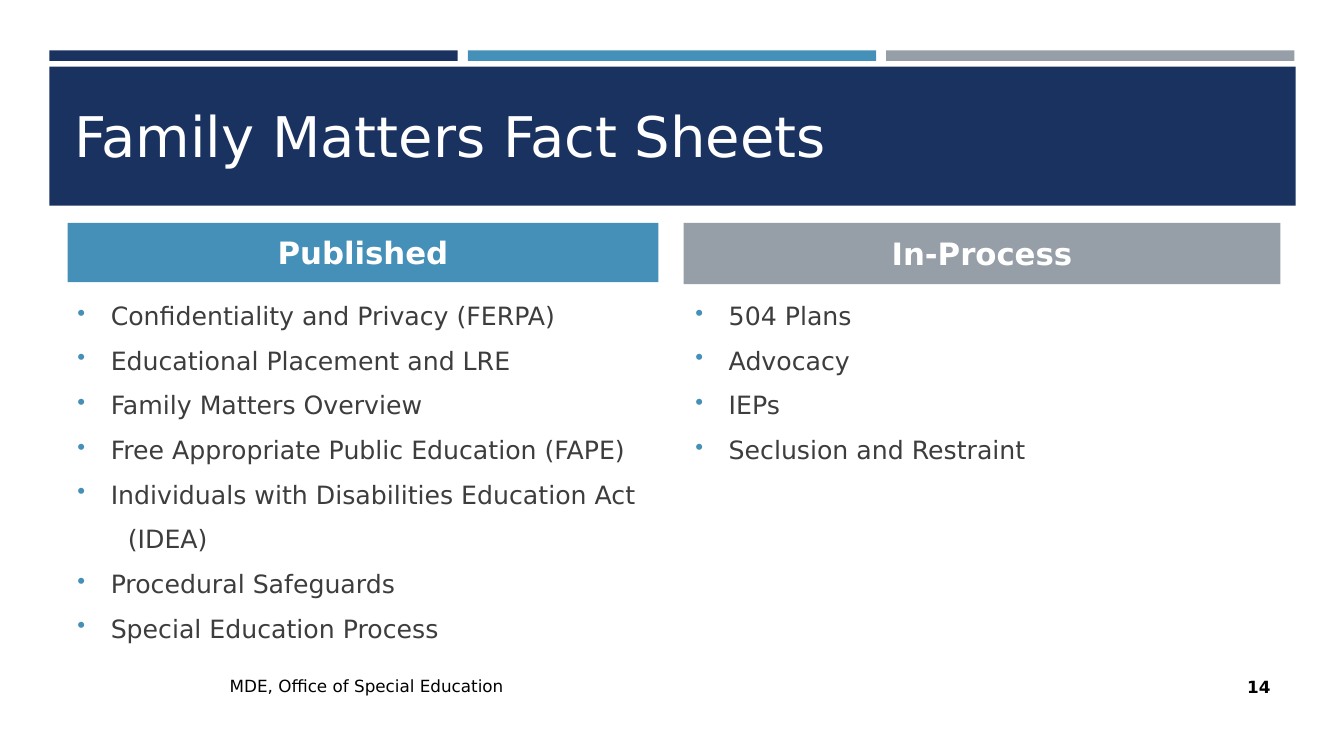
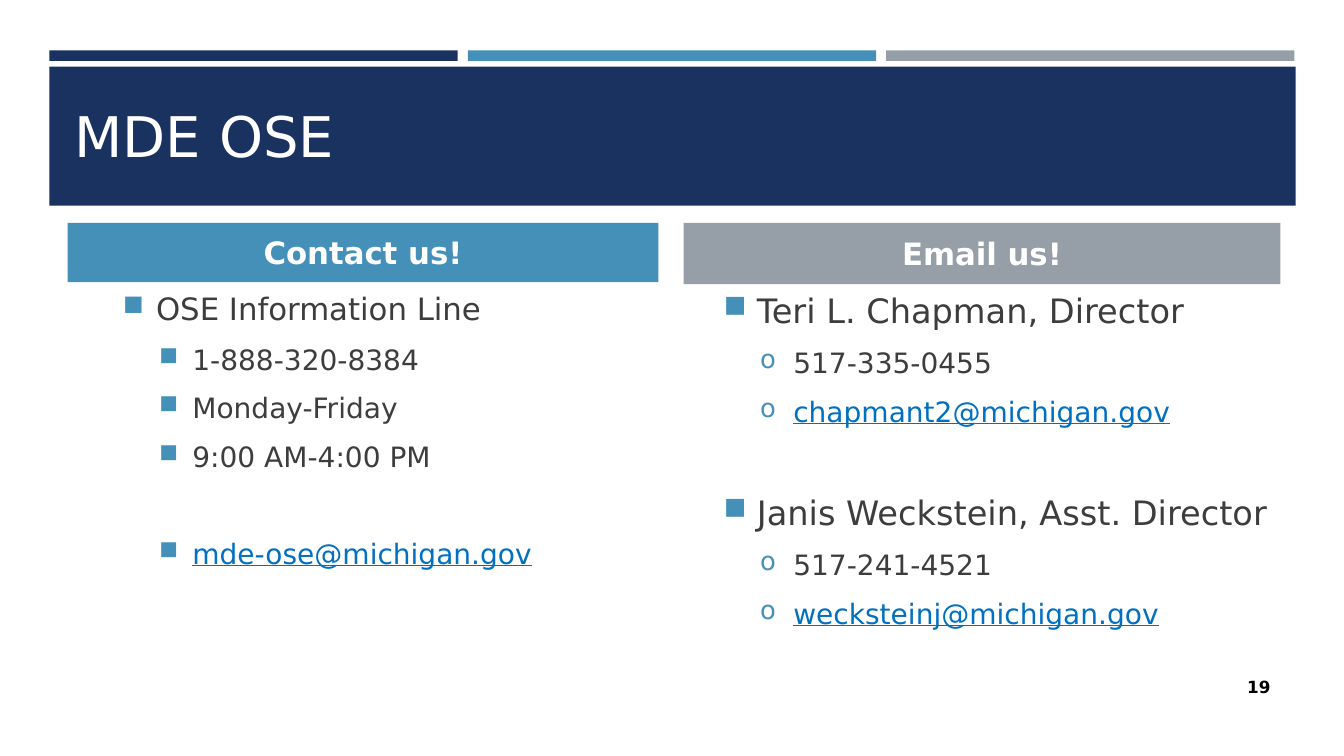
from dataclasses import dataclass
from lxml.etree import SubElement as Sub
from pptx import Presentation
from pptx.dml.color import RGBColor as Rgb
from pptx.enum.shapes import MSO_SHAPE as Shape
from pptx.enum.text import MSO_ANCHOR as Anchor, MSO_AUTO_SIZE as Fit, PP_ALIGN as Align
from pptx.oxml.ns import qn
from pptx.util import Inches, Pt


@dataclass(frozen=True)
class Theme:
    """Colours, type sizes and paragraph spacing."""
    navy: str = "1A3260"
    blue: str = "4590B8"
    gray: str = "969FA7"
    ink: str = "3D3D3D"
    link: str = "0070C0"
    white: str = "FFFFFF"
    black: str = "000000"
    font: str = "DejaVu Sans"
    title: int = 40
    lead: int = 24
    head: int = 22
    sub: int = 20
    item: int = 18
    foot: int = 12
    lift: float = 0.24  # space before, as a share of the type size
    drop: int = 6       # space after
    skip: int = 34      # extra space before a new group


T = Theme()

# Kinds of list line: bullet, left indent, hanging indent, font values
KINDS = {
    "dot": ("•", 0.33, -0.33, dict(size=T.item)),
    "cont": (None, 0.5, 0, dict(size=T.item)),
    "info": ("■", 0.33, -0.33, dict(size=T.head)),
    "name": ("■", 0.33, -0.33, dict(size=T.lead)),
    "box": ("■", 0.69, -0.33, dict(size=T.sub)),
    "ring": ("o", 0.69, -0.33, dict(size=T.sub)),
    "boxmail": ("■", 0.69, -0.33, dict(size=T.sub, color=T.link, underline=True)),
    "ringmail": ("o", 0.69, -0.33, dict(size=T.sub, color=T.link, underline=True)),
}


class Deck:
    """Holds the style and the current slide; places are percent of the slide."""

    def __init__(self):
        self.prs = Presentation()
        self.prs.slide_width, self.prs.slide_height = Inches(13.33), Inches(7.5)
        self.slide = None

    def place(self, x, y, w, h):
        wide, high = self.prs.slide_width, self.prs.slide_height
        return [int(n * side / 100) for n, side in zip((x, y, w, h), (wide, high) * 2)]

    def style(self, para, size, color=T.ink, **more):
        form = dict(name=T.font, size=Pt(size), **more)
        for key, val in form.items():
            setattr(para.font, key, val)
        para.font.color.rgb = Rgb.from_string(color)

    def put(self, shape, text, align=Align.LEFT, **form):
        frame = shape.text_frame
        setup = dict(word_wrap=True, auto_size=Fit.NONE, vertical_anchor=Anchor.MIDDLE)
        for key, val in setup.items():
            setattr(frame, key, val)
        frame.text = text
        para = frame.paragraphs[0]
        para.alignment = align
        self.style(para, **form)

    def rect(self, spot, fill):
        shape = self.slide.shapes.add_shape(Shape.RECTANGLE, *self.place(*spot))
        shape.shadow.inherit = False
        shape.fill.solid()
        shape.fill.fore_color.rgb = Rgb.from_string(fill)
        shape.line.fill.background()
        return shape

    def label(self, spot, text, **form):
        self.put(self.slide.shapes.add_textbox(*self.place(*spot)), text, **form)

    def page(self, title, num):
        self.slide = self.prs.slides.add_slide(self.prs.slide_layouts[5])
        # Three stripes above the title band
        for i, fill in enumerate((T.navy, T.blue, T.gray)):
            self.rect((3.68 + i * 31.13, 6.67, 30.38, 1.4), fill)
        self.rect((3.68, 8.8, 92.72, 18.4), T.navy)
        # Title, brought in front of its band
        head = self.slide.shapes.title
        head.left, head.top, head.width, head.height = self.place(4.8, 10.67, 90.47, 14.4)
        self.put(head, title, size=T.title, color=T.white)
        head.element.getparent().append(head.element)
        # Page number
        self.label((86.65, 88.13, 8.63, 5.33), num, align=Align.RIGHT,
                   size=T.foot, color=T.black, bold=True)

    def heads(self, left, right):
        for text, fill, x, w, h in ((left, T.blue, 5.03, 43.96, 7.87),
                                    (right, T.gray, 50.86, 44.41, 8.13)):
            self.put(self.rect((x, 29.47, w, h), fill), text, align=Align.CENTER,
                     size=T.head, color=T.white, bold=True)

    def bullet(self, para, mark, left, hang):
        props = para._p.get_or_add_pPr()
        props.set("marL", str(Inches(left)))
        props.set("indent", str(Inches(hang)))
        if mark:
            Sub(Sub(props, qn("a:buClr")), qn("a:srgbClr"), val=T.blue)
            Sub(props, qn("a:buSzPct"), val="92000")
            Sub(props, qn("a:buChar"), char=mark)
        else:
            Sub(props, qn("a:buNone"))

    def lines(self, spot, groups):
        frame = self.slide.shapes.add_textbox(*self.place(*spot)).text_frame
        frame.word_wrap = True
        para = None
        for group in groups:
            for i, (kind, text) in enumerate(group):
                first = para is None
                para = frame.paragraphs[0] if first else frame.add_paragraph()
                mark, left, hang, form = KINDS[kind]
                self.bullet(para, mark, left, hang)
                para.text = text
                gap = T.lift * form["size"] + (0 if i else T.skip)
                para.space_before = Pt(0 if first else gap)
                para.space_after = Pt(T.drop)
                self.style(para, **form)


def facts(deck):
    deck.page("Family Matters Fact Sheets", "14")
    deck.heads("Published", "In-Process")
    deck.lines((5.03, 39.07, 44.26, 46.4), [[
        ("dot", "Confidentiality and Privacy (FERPA)"),
        ("dot", "Educational Placement and LRE"),
        ("dot", "Family Matters Overview"),
        ("dot", "Free Appropriate Public Education (FAPE)"),
        ("dot", "Individuals with Disabilities Education Act"),
        ("cont", "(IDEA)"),
        ("dot", "Procedural Safeguards"),
        ("dot", "Special Education Process"),
    ]])
    plans = ("504 Plans", "Advocacy", "IEPs", "Seclusion and Restraint")
    deck.lines((51.01, 39.07, 44.26, 46.4), [[("dot", text) for text in plans]])
    deck.label((16.35, 88, 45.16, 5.33), "MDE, Office of Special Education",
               size=T.foot, color=T.black)


def contact(deck):
    deck.page("MDE OSE", "19")
    deck.heads("Contact us!", "Email us!")
    deck.lines((8.4, 37.73, 34.13, 48.67), [
        [("info", "OSE Information Line"), ("box", "1-888-320-8384"),
         ("box", "Monday-Friday"), ("box", "9:00 AM-4:00 PM")],
        [("boxmail", "mde-ose@michigan.gov")],
    ])
    staff = (("Teri L. Chapman, Director", "517-335-0455", "chapmant2@michigan.gov"),
             ("Janis Weckstein, Asst. Director", "517-241-4521", "wecksteinj@michigan.gov"))
    deck.lines((53.11, 37.73, 42.91, 50.4),
               [list(zip(("name", "ring", "ringmail"), who)) for who in staff])


def main():
    deck = Deck()
    facts(deck)
    contact(deck)
    deck.prs.save("out.pptx")


if __name__ == "__main__":
    main()
